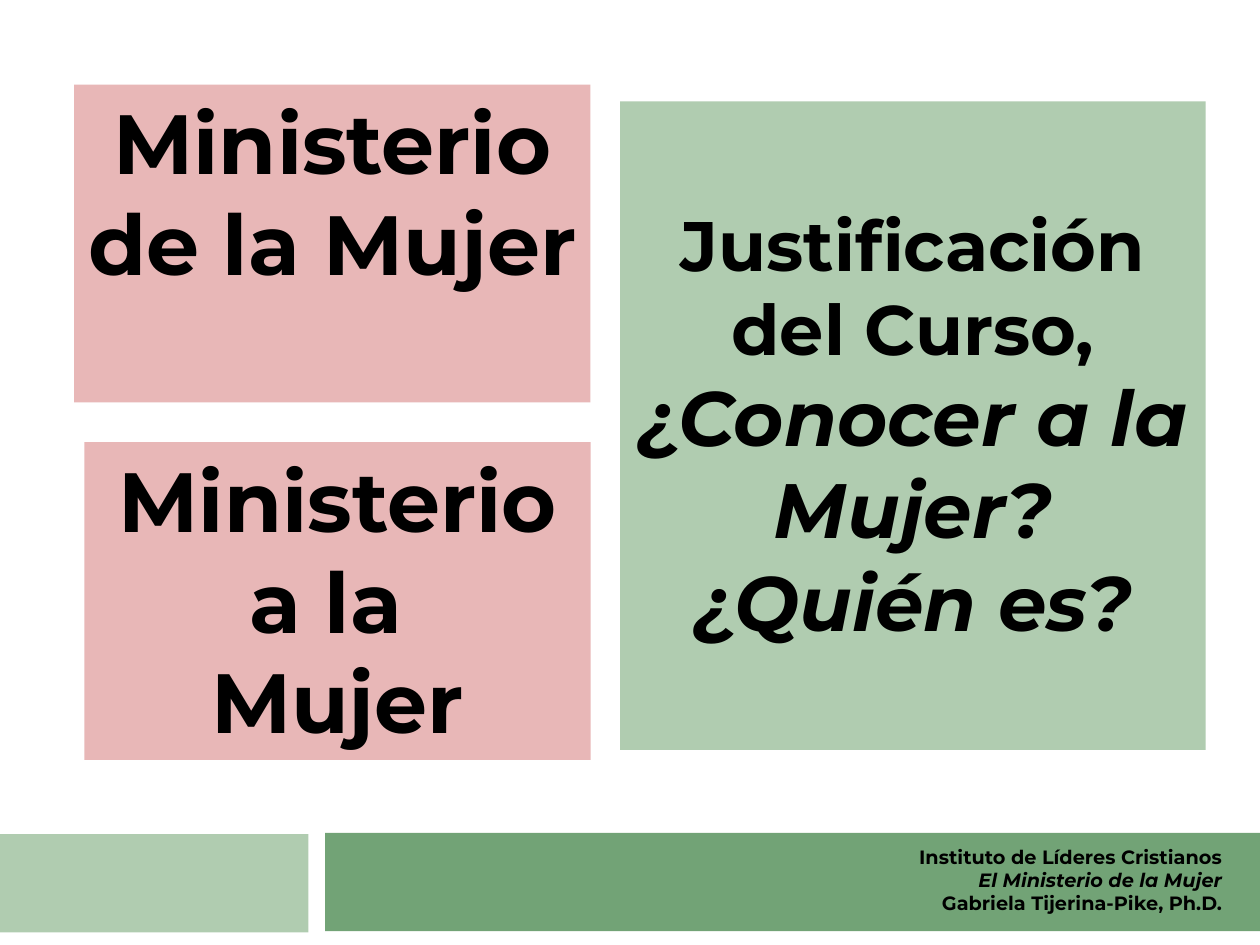
from dataclasses import dataclass

from pptx import Presentation
from pptx.dml.color import RGBColor as Rgb
from pptx.enum.shapes import MSO_SHAPE as Kind
from pptx.enum.text import MSO_ANCHOR as Anchor, MSO_AUTO_SIZE as Fit, PP_ALIGN as Align
from pptx.util import Pt


@dataclass(frozen=True)
class Theme:
    font: str = "Montserrat"
    ink: str = "000000"
    pale: str = "B0CCB0"
    green: str = "72A376"
    pink: str = "E8B7B7"
    small: int = 11
    head: int = 40
    quest: int = 44
    big: int = 48


@dataclass(frozen=True)
class Box:
    left: float
    top: float
    width: float
    height: float

    def place(self) -> tuple:
        return Pt(self.left), Pt(self.top), Pt(self.width), Pt(self.height)


@dataclass(frozen=True)
class Line:
    text: str
    size: int
    slant: bool = False


@dataclass(frozen=True)
class Panel:
    box: Box
    fill: str
    lines: tuple = ()


LOOK = Theme()
BANDS = (
    Panel(Box(-0.7, 476.6, 177, 56.2), LOOK.pale),
    Panel(Box(185.8, 475.9, 534.2, 56.2), LOOK.green),
)
CARDS = (
    Panel(Box(48.2, 252.7, 289.4, 181.6), LOOK.pink,
          (Line("Ministerio a la ", LOOK.big), Line("Mujer", LOOK.big))),
    Panel(Box(42.4, 48.4, 295, 181.6), LOOK.pink,
          (Line("Ministerio de la Mujer", LOOK.big),)),
)
TITLE = Panel(Box(354.3, 58, 334.6, 370.6), LOOK.pale, (
    Line("Justificación del Curso,", LOOK.head),
    Line("¿Conocer a la Mujer?", LOOK.quest, True),
    Line("¿Quién es?", LOOK.quest, True),
))
NOTE = Box(116, 479.6, 589.6, 47.5)
CREDIT = (
    Line("Instituto de Líderes Cristianos", LOOK.small),
    Line("El Ministerio de la Mujer", LOOK.small, True),
    Line("Gabriela Tijerina-Pike, Ph.D.", LOOK.small),
)


def paint(shape, shade: str) -> None:
    shape.fill.solid()
    shape.fill.fore_color.rgb = Rgb.from_string(shade)
    shape.line.fill.background()


def write(frame, lines: tuple, align: Align, top: float = 3.6) -> None:
    """Set the lines as paragraphs, starting at the given top inset."""
    frame.word_wrap = True
    frame.auto_size = Fit.NONE
    frame.vertical_anchor = Anchor.TOP
    frame.margin_left = frame.margin_right = Pt(7.2)
    frame.margin_top, frame.margin_bottom = Pt(top), Pt(3.6)
    for i, line in enumerate(lines):
        para = frame.add_paragraph() if i else frame.paragraphs[0]
        para.alignment = align
        run = para.add_run()
        run.text = line.text
        font = run.font
        font.name, font.size = LOOK.font, Pt(line.size)
        font.bold, font.italic = True, line.slant
        font.color.rgb = Rgb.from_string(LOOK.ink)


def draw(slide, panel: Panel) -> None:
    shape = slide.shapes.add_shape(Kind.RECTANGLE, *panel.box.place())
    shape.shadow.inherit = False
    paint(shape, panel.fill)
    if panel.lines:
        write(shape.text_frame, panel.lines, Align.CENTER)


def main() -> None:
    deck = Presentation()
    deck.slide_width, deck.slide_height = Pt(720), Pt(540)
    slide = deck.slides.add_slide(deck.slide_layouts[5])

    title = slide.shapes.title
    title.left, title.top, title.width, title.height = TITLE.box.place()
    paint(title, TITLE.fill)
    write(title.text_frame, TITLE.lines, Align.CENTER, top=57.2)

    for panel in BANDS + CARDS:
        draw(slide, panel)
    note = slide.shapes.add_textbox(*NOTE.place())
    write(note.text_frame, CREDIT, Align.RIGHT)
    deck.save("out.pptx")


if __name__ == "__main__":
    main()
